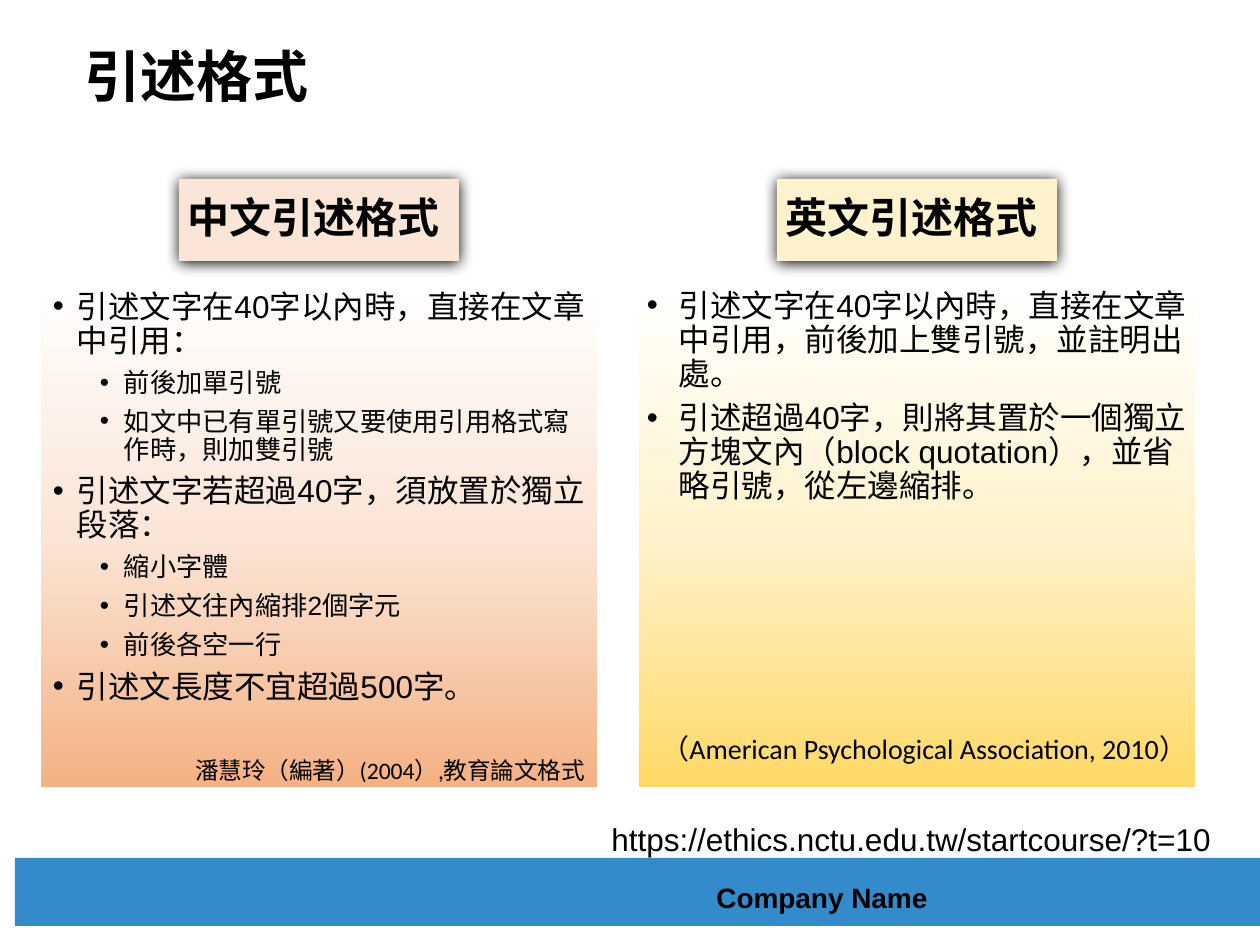
import copy
import pptx
import pptx.util
import pptx.dml.color
import pptx.enum.shapes
import pptx.enum.text
import pptx.oxml.ns
import lxml.etree

# Content: each line is (style, text)
TITLE = "引述格式"
LINK = "https://ethics.nctu.edu.tw/startcourse/?t=10"
BRAND = "Company Name"
PANELS = [
    dict(
        head="中文引述格式", tint="FBE5D6", grad=("F4B183", "FBE5D6", "FFFFFF"),
        inset=(13, 6), hang=24,
        lines=[
            ("main", "引述文字在40字以內時，直接在文章中引用："),
            ("sub", "前後加單引號"),
            ("sub", "如文中已有單引號又要使用引用格式寫作時，則加雙引號"),
            ("main", "引述文字若超過40字，須放置於獨立段落："),
            ("sub", "縮小字體"),
            ("sub", "引述文往內縮排2個字元"),
            ("sub", "前後各空一行"),
            ("main", "引述文長度不宜超過500字。"),
        ],
        cite="潘慧玲（編著）(2004）,教育論文格式", size=13.5, gap=25),
    dict(
        head="英文引述格式", tint="FFF2CC", grad=("FFD966", "FFF2CC", "FFFFFF"),
        inset=(9, 5), hang=32,
        lines=[
            ("main", "引述文字在40字以內時，直接在文章中引用，前後加上雙引號，並註明出處。"),
            ("main", "引述超過40字，則將其置於一個獨立方塊文內（block quotation），"
                     "並省略引號，從左邊縮排。"),
        ],
        cite="（American Psychological Association, 2010）", size=16, gap=126),
]

# Layout in px
LEFT, STEP, TOP, WIDE, HIGH = 40, 598, 285, 558, 503
TAG_TOP, TAG_W, TAG_H = 179, 280, 82
SUB_IN = 47

Pt = pptx.util.Pt
ALIGN = pptx.enum.text.PP_ALIGN
MIDDLE = pptx.enum.text.MSO_ANCHOR.MIDDLE
RECT = pptx.enum.shapes.MSO_SHAPE.RECTANGLE
qn = pptx.oxml.ns.qn


def px(n):
    return round(n * 914400 / 126)


def color(code):
    return pptx.dml.color.RGBColor.from_string(code)


def style(para, size, face, bold=False, align=ALIGN.LEFT):
    para.alignment = align
    font = para.font
    font.size, font.name, font.bold = Pt(size), face, bold
    font.color.rgb = color("000000")


def space(para, after=0, before=0):
    para.line_spacing = 0.9
    para.space_after, para.space_before = Pt(after), Pt(before)


def bullet(para, left, hang):
    prop = para._p.get_or_add_pPr()
    prop.set("marL", str(px(left)))
    prop.set("indent", str(-px(hang)))
    face = lxml.etree.SubElement(prop, qn("a:buFont"))
    face.set("typeface", "Arial")
    lxml.etree.SubElement(prop, qn("a:buChar")).set("char", "•")


def pad(frame, side, end):
    frame.margin_left = frame.margin_right = px(side)
    frame.margin_top = frame.margin_bottom = px(end)
    frame.word_wrap = True


def rect(x, y, w, h, fill=None):
    shape = slide.shapes.add_shape(RECT, px(x), px(y), px(w), px(h))
    shape.shadow.inherit = False
    shape.line.fill.background()
    if fill:
        shape.fill.solid()
        shape.fill.fore_color.rgb = color(fill)
    return shape


def label(x, y, w, h, text, size, bold=False, wrap=True):
    frame = slide.shapes.add_textbox(px(x), px(y), px(w), px(h)).text_frame
    frame.word_wrap = wrap
    frame.text = text
    style(frame.paragraphs[0], size, "Arial", bold)


def blend(shape, codes):
    shape.fill.gradient()
    shape.fill.gradient_angle = 90
    stops = shape._element.spPr.find(".//" + qn("a:gsLst"))
    stops.append(copy.deepcopy(stops[0]))
    for i, (stop, code) in enumerate(zip(shape.fill.gradient_stops, codes)):
        stop.position = i / 2
        stop.color.rgb = color(code)


def glow(shape):
    effect = shape._element.spPr.find(qn("a:effectLst"))
    shade = lxml.etree.SubElement(
        effect, qn("a:outerShdw"), blurRad=str(Pt(8.5)), dist=str(Pt(1)),
        dir="5400000", algn="t", rotWithShape="0")
    lxml.etree.SubElement(shade, qn("a:srgbClr")).set("val", "000000")


def panel(x, data):
    box = rect(x, TOP, WIDE, HIGH)
    blend(box, data["grad"])
    box.line.color.rgb = color("FFFFFF")
    box.line.width = Pt(0.75)
    frame = box.text_frame
    pad(frame, *data["inset"])
    frame.vertical_anchor = pptx.enum.text.MSO_ANCHOR.TOP
    para = frame.paragraphs[0]
    for kind, text in data["lines"]:
        para.text = text
        sub = kind == "sub"
        bullet(para, data["hang"] + SUB_IN * sub, data["hang"])
        para.level = int(sub)
        style(para, 15 if sub else 18, "Arial")
        space(para, 6)
        para = frame.add_paragraph()
    para.text = data["cite"]
    style(para, data["size"], "Calibri", align=ALIGN.RIGHT)
    space(para, 6, data["gap"])


def tag(x, data):
    box = rect(x + (WIDE - TAG_W) // 2, TAG_TOP, TAG_W, TAG_H, data["tint"])
    glow(box)
    frame = box.text_frame
    pad(frame, 9, 5)
    frame.vertical_anchor = MIDDLE
    frame.text = data["head"]
    style(frame.paragraphs[0], 24, "Calibri", True)
    space(frame.paragraphs[0])


deck = pptx.Presentation()
deck.slide_width, deck.slide_height = px(1260), px(945)
slide = deck.slides.add_slide(deck.slide_layouts[5])

# Footer bar
rect(15, 858, 1250, 68, "338BCB")
label(704, 874, 236, 47, BRAND, 16, bold=True)

# Title
title = slide.shapes.title
title.left, title.top, title.width, title.height = map(px, (72, 34, 1086, 91))
title.text_frame.text = TITLE
title.text_frame.vertical_anchor = MIDDLE
style(title.text_frame.paragraphs[0], 32, "Calibri", True)
space(title.text_frame.paragraphs[0])

# Two columns
for i, data in enumerate(PANELS):
    panel(LEFT + i * STEP, data)
    tag(LEFT + i * STEP, data)

# Source link
label(599, 814, 631, 50, LINK, 18, wrap=False)

deck.save("out.pptx")
